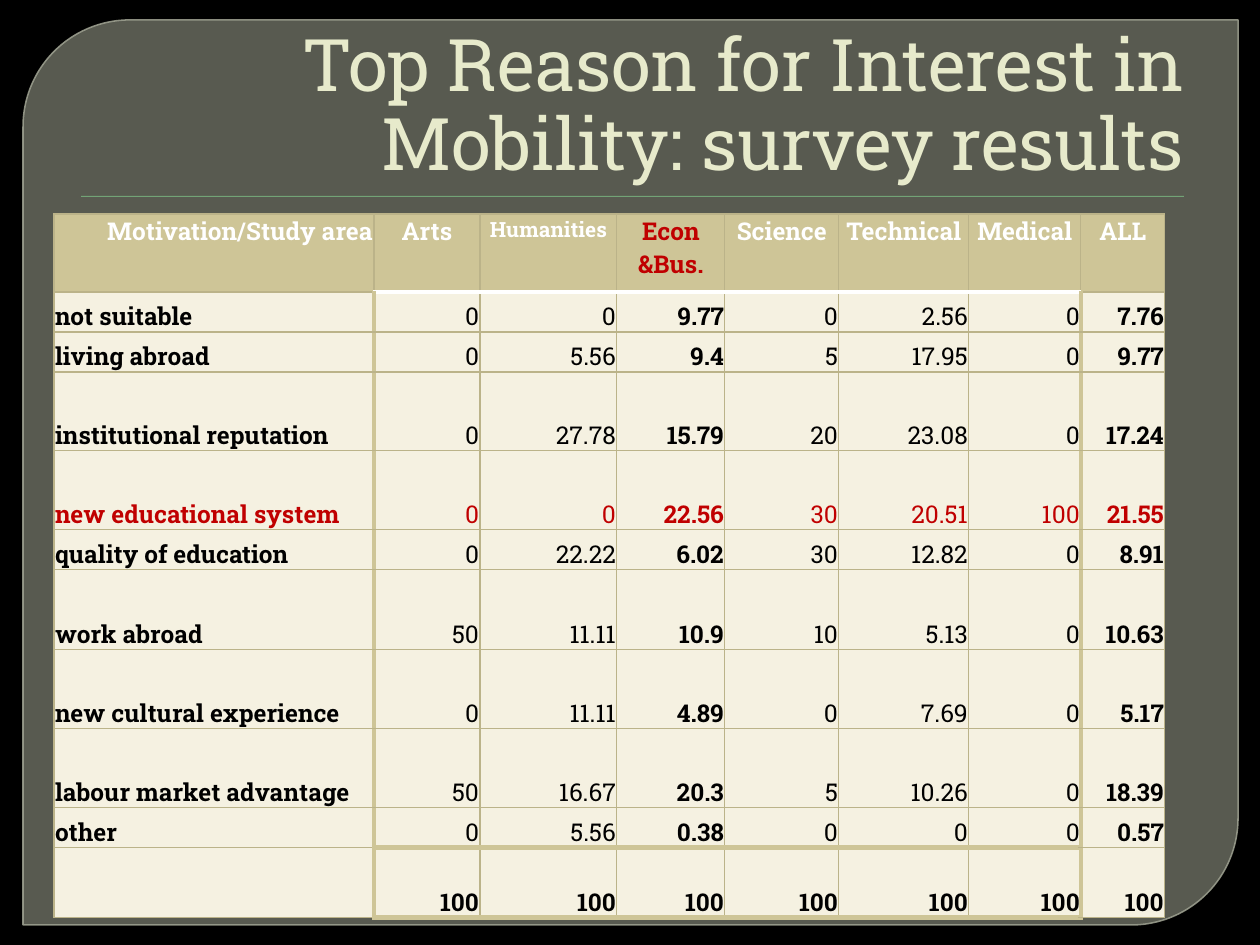
from dataclasses import dataclass

from lxml.etree import SubElement
from pptx import Presentation
from pptx.dml.color import RGBColor
from pptx.enum.shapes import MSO_SHAPE
from pptx.enum.text import MSO_ANCHOR, PP_ALIGN
from pptx.oxml.ns import qn
from pptx.util import Emu, Pt


@dataclass(frozen=True)
class Theme:
    font: str = "Roboto Slab"
    back: str = "000000"
    panel: str = "888B7B"
    edge: str = "9DA090"
    rule: str = "72A376"
    title: str = "E7EACB"
    head: str = "CEC597"
    body: str = "F5F1E1"
    grid: str = "BBB389"
    ink: str = "000000"
    light: str = "FFFFFF"
    accent: str = "C00000"
    title_size: float = 41.4
    size: float = 14
    small: float = 12
    thin: float = 0.75
    thick: float = 3


T = Theme()
LEFT, RIGHT, CENTER = PP_ALIGN.LEFT, PP_ALIGN.RIGHT, PP_ALIGN.CENTER

COLS = [320, 106, 137, 108, 114, 130, 112, 84]
ROWS = [78, 40, 40, 79, 79, 40, 80, 79, 79, 40, 70]
HEAD = ["Motivation/Study area", "Arts", "Humanities", "Econ &Bus.",
        "Science", "Technical", "Medical", "ALL"]
DATA = [
    ["not suitable", "0", "0", "9.77", "0", "2.56", "0", "7.76"],
    ["living abroad", "0", "5.56", "9.4", "5", "17.95", "0", "9.77"],
    ["institutional reputation", "0", "27.78", "15.79", "20", "23.08", "0", "17.24"],
    ["new educational system", "0", "0", "22.56", "30", "20.51", "100", "21.55"],
    ["quality of education", "0", "22.22", "6.02", "30", "12.82", "0", "8.91"],
    ["work abroad", "50", "11.11", "10.9", "10", "5.13", "0", "10.63"],
    ["new cultural experience", "0", "11.11", "4.89", "0", "7.69", "0", "5.17"],
    ["labour market advantage", "50", "16.67", "20.3", "5", "10.26", "0", "18.39"],
    ["other", "0", "5.56", "0.38", "0", "0", "0", "0.57"],
    [""] + ["100"] * 7,
]
TOTAL = len(DATA)
ECON, ALL = 3, 7
KEY = 4


def px(n):
    return Emu(round(n * 914400 / 126))


def rgb(code):
    return RGBColor.from_string(code)


def write(frame, text, size=T.size, color=T.ink, bold=False, align=LEFT, space=None):
    para = frame.paragraphs[0]
    para.alignment = align
    para.line_spacing = space
    font = para.font
    if text:
        run = para.add_run()
        run.text = text
        font = run.font
    font.name, font.size, font.bold = T.font, Pt(size), bold
    font.color.rgb = rgb(color)


def fade(fill, percent):
    """Make a solid fill partly transparent."""
    color = fill._xPr.find(qn("a:solidFill"))[0]
    SubElement(color, qn("a:alpha"), val=str(percent * 1000))


def shape(slide, kind, box, color):
    item = slide.shapes.add_shape(kind, *map(px, box))
    item.shadow.inherit = False
    item.fill.solid()
    item.fill.fore_color.rgb = rgb(color)
    item.line.fill.background()
    return item


def frame(slide, box):
    """Draw the rounded panel and the rule under the title."""
    x, y, w, h = box
    panel = shape(slide, MSO_SHAPE.ROUND_2_DIAG_RECTANGLE, box, T.panel)
    panel.adjustments[0], panel.adjustments[1] = 0.118, 0
    fade(panel.fill, 65)
    panel.line.color.rgb = rgb(T.edge)
    panel.line.width = Pt(0.87)
    fade(panel.line.fill, 88)
    shape(slide, MSO_SHAPE.RECTANGLE, (x + 58, y + 176, w - 112, 1), T.rule)


def heading(slide, box, text):
    title = slide.shapes.title
    title.left, title.top, title.width, title.height = map(px, box)
    title.text_frame.word_wrap = True
    title.text_frame.vertical_anchor = MSO_ANCHOR.BOTTOM
    write(title.text_frame, text, T.title_size, T.title, align=RIGHT, space=0.91)
    tree = title._element.getparent()
    tree.append(title._element)  # bring in front of the panel


def across(row, col):
    """Colour and width of the border above a cell."""
    if 0 < col < ALL and row in (1, TOTAL, TOTAL + 1):
        return (T.light if row == 1 else T.head), T.thick
    return T.grid, T.thin


def down(row, col):
    """Colour and width of the border left of a cell."""
    if row and col in (1, ALL):
        return T.head, T.thick
    return T.grid, T.thin


def borders(cell, row, col):
    props = cell._tc.get_or_add_tcPr()
    sides = {"L": down(row, col), "R": down(row, col + 1),
             "T": across(row, col), "B": across(row + 1, col)}
    for side, (color, width) in sides.items():
        line = SubElement(props, qn(f"a:ln{side}"), w=str(Pt(width)))
        SubElement(SubElement(line, qn("a:solidFill")), qn("a:srgbClr"), val=color)


def style(row, col):
    """Text format of one cell."""
    if row == 0:
        return dict(size=T.small if col == 2 else T.size, bold=True,
                    color=T.accent if col == ECON else T.light,
                    align=CENTER if col else RIGHT)
    return dict(bold=col in (0, ECON, ALL) or row == TOTAL,
                color=T.accent if row == KEY else T.ink,
                align=RIGHT if col else LEFT)


def results(slide, x, y):
    box = map(px, (x, y, sum(COLS), sum(ROWS)))
    table = slide.shapes.add_table(len(ROWS), len(COLS), *box).table
    table.horz_banding = False
    for col, width in zip(table.columns, COLS):
        col.width = px(width)
    for row, height in zip(table.rows, ROWS):
        row.height = px(height)
    for r, texts in enumerate([HEAD] + DATA):
        for c, text in enumerate(texts):
            cell = table.cell(r, c)
            cell.margin_left = cell.margin_right = cell.margin_top = px(1)
            cell.margin_bottom = 0
            cell.vertical_anchor = MSO_ANCHOR.BOTTOM if r else MSO_ANCHOR.TOP
            borders(cell, r, c)
            cell.fill.solid()
            cell.fill.fore_color.rgb = rgb(T.body if r else T.head)
            write(cell.text_frame, text, **style(r, c))


def main():
    deck = Presentation()
    deck.slide_width, deck.slide_height = px(1260), px(945)
    slide = deck.slides.add_slide(deck.slide_layouts[5])
    slide.background.fill.solid()
    slide.background.fill.fore_color.rgb = rgb(T.back)
    frame(slide, (23, 20, 1215, 905))
    heading(slide, (54, 35, 1143, 158),
            "Top Reason for Interest in Mobility: survey results")
    results(slide, 54, 214)
    deck.save("out.pptx")


if __name__ == "__main__":
    main()
